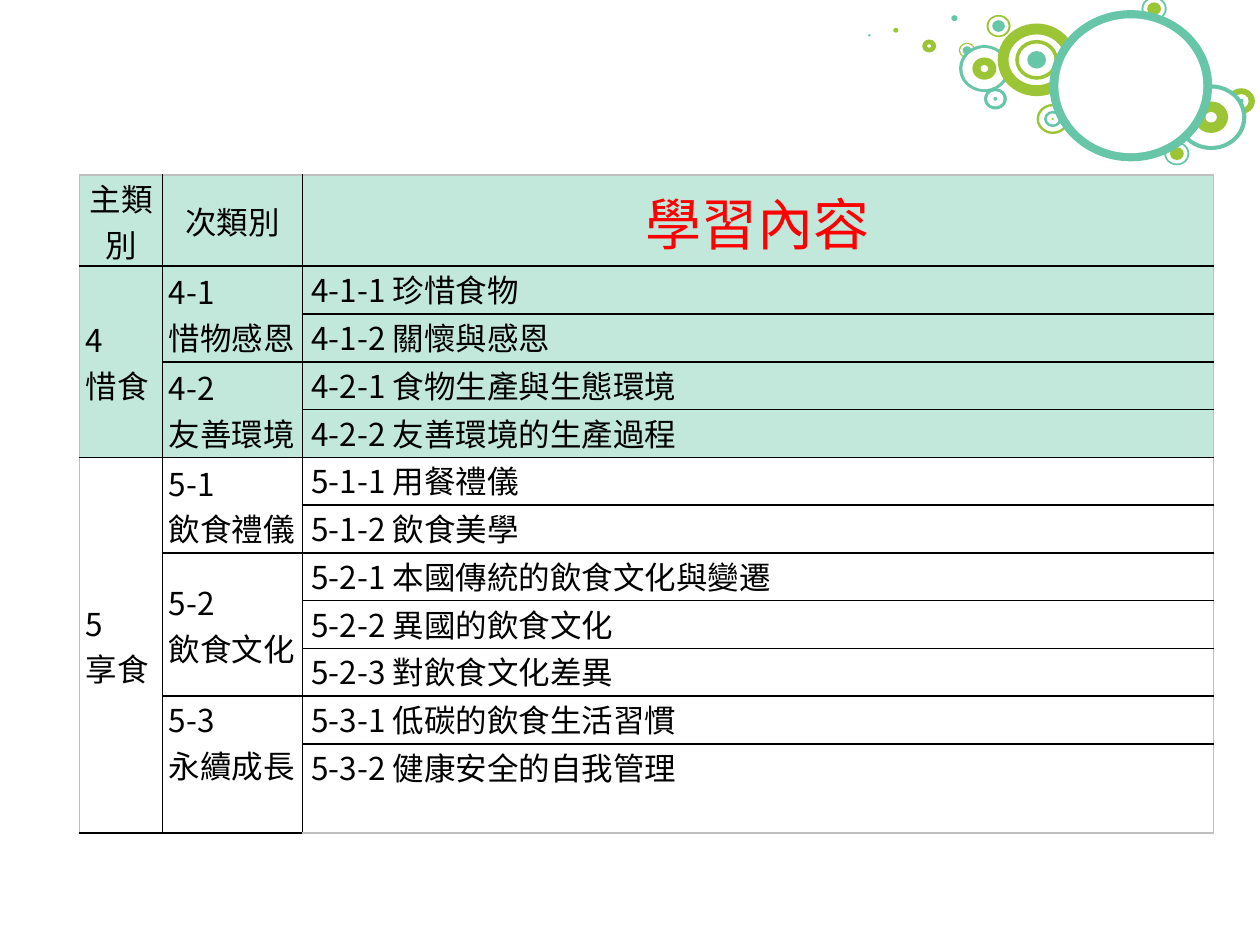
from lxml import etree
from pptx import Presentation
from pptx.dml.color import RGBColor
from pptx.enum import shapes, text
from pptx.oxml.ns import qn
from pptx.util import Pt

FONT = "Noto Sans CJK SC"
COLORS = {"teal": "67C5A8", "green": "9CC535", "white": "FFFFFF", "mint": "C2E8DC",
          "black": "000000", "red": "FF0000", "grey": "BFBFBF"}


def rgb(name):
    return RGBColor.from_string(COLORS[name])


def write(p, words, size=18, color="black", font=FONT, align=None):
    p.alignment = align
    r = p.add_run()
    r.text = words
    r.font.size = Pt(size)
    r.font.color.rgb = rgb(color)
    r.font.name = font
    etree.SubElement(r.font._element, qn("a:ea"), typeface=FONT)


prs = Presentation()
prs.slide_width, prs.slide_height = Pt(720), Pt(540)
s = prs.slides.add_slide(prs.slide_layouts[6])

# Bubbles: centre x, centre y, then (width, colour, ring thickness or 0 for a disc)
bubbles = [
    (659.5, 5, [(14.4, "teal", 0), (12.2, "white", 0), (7.9, "green", 0)]),
    (531, 26.3, [(8, "green", 0.37)]),
    (545.4, 10.4, [(3.6, "teal", 0)]),
    (511.9, 17.3, [(2.9, "green", 0)]),
    (496.8, 20.2, [(1.4, "teal", 0)]),
    (552.6, 28.8, [(9.4, "green", 0), (7.9, "white", 0), (5, "teal", 0)]),
    (568.8, 56.5, [(13, "teal", 0), (9.4, "white", 0), (2.2, "teal", 0)]),
    (562.5, 39.2, [(28.8, "teal", 0), (25.2, "white", 0), (13.7, "green", 0),
                   (4.3, "white", 0)]),
    (709.2, 57.8, [(15.8, "green", 0), (8.6, "white", 0), (2.9, "teal", 0)]),
    (692.1, 67, [(40.3, "teal", 0), (35.3, "white", 0), (19.4, "green", 0),
                 (6.5, "white", 0)]),
    (601.6, 68, [(18.5, "green", 0.08), (10, "teal", 0.16), (1.2, "green", 0)]),
    (592.4, 34.2, [(35.3, "white", 0), (44.6, "green", 0.15), (24.5, "green", 0.09),
                   (10.8, "teal", 0)]),
    (672.5, 87.8, [(14.4, "teal", 0), (12.2, "white", 0), (7.9, "green", 0)]),
    (570.6, 14.9, [(13.7, "green", 0), (11.5, "white", 0), (7.2, "teal", 0)]),
    (646.2, 49, [(92.9, "teal", 0), (82.8, "white", 0)]),
]
for x, y, circles in bubbles:
    for w, color, ring in circles:
        h = w * 0.93
        kind = shapes.MSO_SHAPE.DONUT if ring else shapes.MSO_SHAPE.OVAL
        sp = s.shapes.add_shape(kind, Pt(x - w / 2), Pt(y - h / 2), Pt(w), Pt(h))
        if ring:
            sp.adjustments[0] = ring
        sp.shadow.inherit = False
        sp.fill.solid()
        sp.fill.fore_color.rgb = rgb(color)
        sp.line.fill.background()

# Table contents: main class, its subclasses, and their items
classes = [
    ("4", "惜食", [
        ("4-1", "惜物感恩", ["珍惜食物", "關懷與感恩"]),
        ("4-2", "友善環境", ["食物生產與生態環境", "友善環境的生產過程"])]),
    ("5", "享食", [
        ("5-1", "飲食禮儀", ["用餐禮儀", "飲食美學"]),
        ("5-2", "飲食文化", ["本國傳統的飲食文化與變遷", "異國的飲食文化", "對飲食文化差異"]),
        ("5-3", "永續成長", ["低碳的飲食生活習慣", "健康安全的自我管理"])]),
]
widths = [47.5, 80, 520.5]
heights = [52] + [27.3] * 10 + [51]
frame = s.shapes.add_table(len(heights), len(widths), Pt(45.4), Pt(100),
                           Pt(sum(widths)), Pt(sum(heights)))
table = frame.table
table.first_row = table.horz_banding = False
for column, w in zip(table.columns, widths):
    column.width = Pt(w)
for row, h in zip(table.rows, heights):
    row.height = Pt(h)

# Cell margins, fills and borders: black inside, grey outside
last_row, last_col = len(heights) - 1, len(widths) - 1
for i in range(last_row + 1):
    for j in range(last_col + 1):
        cell = table.cell(i, j)
        side = 5 if j == last_col and i else 3.6
        cell.margin_left = cell.margin_right = Pt(side)
        cell.margin_top = cell.margin_bottom = 0
        if j < last_col or i == 0:
            cell.vertical_anchor = text.MSO_ANCHOR.MIDDLE
        if i < 5:
            cell.fill.solid()
            cell.fill.fore_color.rgb = rgb("mint")
        else:
            cell.fill.background()
        tcPr = cell._tc.get_or_add_tcPr()
        edges = {"lnL": j == 0, "lnR": j == last_col, "lnT": i == 0, "lnB": i == last_row}
        for n, (tag, outer) in enumerate(edges.items()):
            ln = etree.Element(qn("a:" + tag), w=str(Pt(1)))
            fill = etree.SubElement(ln, qn("a:solidFill"))
            etree.SubElement(fill, qn("a:srgbClr"), val=COLORS["grey" if outer else "black"])
            tcPr.insert(n, ln)

# Header
for j, (words, size, color) in enumerate([("主類別", 18, "black"), ("次類別", 18, "black"),
                                          ("學習內容", 32, "red")]):
    write(table.cell(0, j).text_frame.paragraphs[0], words, size=size, color=color,
          align=text.PP_ALIGN.CENTER)

# Body, with merged class and subclass cells
row = 1
for number, name, subclasses in classes:
    labels = [(0, row, sum(len(items) for *_, items in subclasses), number, name)]
    for code, title, items in subclasses:
        labels.append((1, row, len(items), code, title))
        for k, item in enumerate(items, 1):
            p = table.cell(row, 2).text_frame.paragraphs[0]
            write(p, f"{code}-{k} ")
            write(p, item, font="Calibri" if row == 1 else FONT)
            row += 1
    for col, top, span, code, title in labels:
        cell = table.cell(top, col)
        cell.merge(table.cell(top + span - 1, col))
        write(cell.text_frame.paragraphs[0], code)
        write(cell.text_frame.add_paragraph(), title)

# The last subclass sits at the top of its taller cell
table.cell(last_row - 1, 1).vertical_anchor = text.MSO_ANCHOR.TOP

prs.save("out.pptx")
